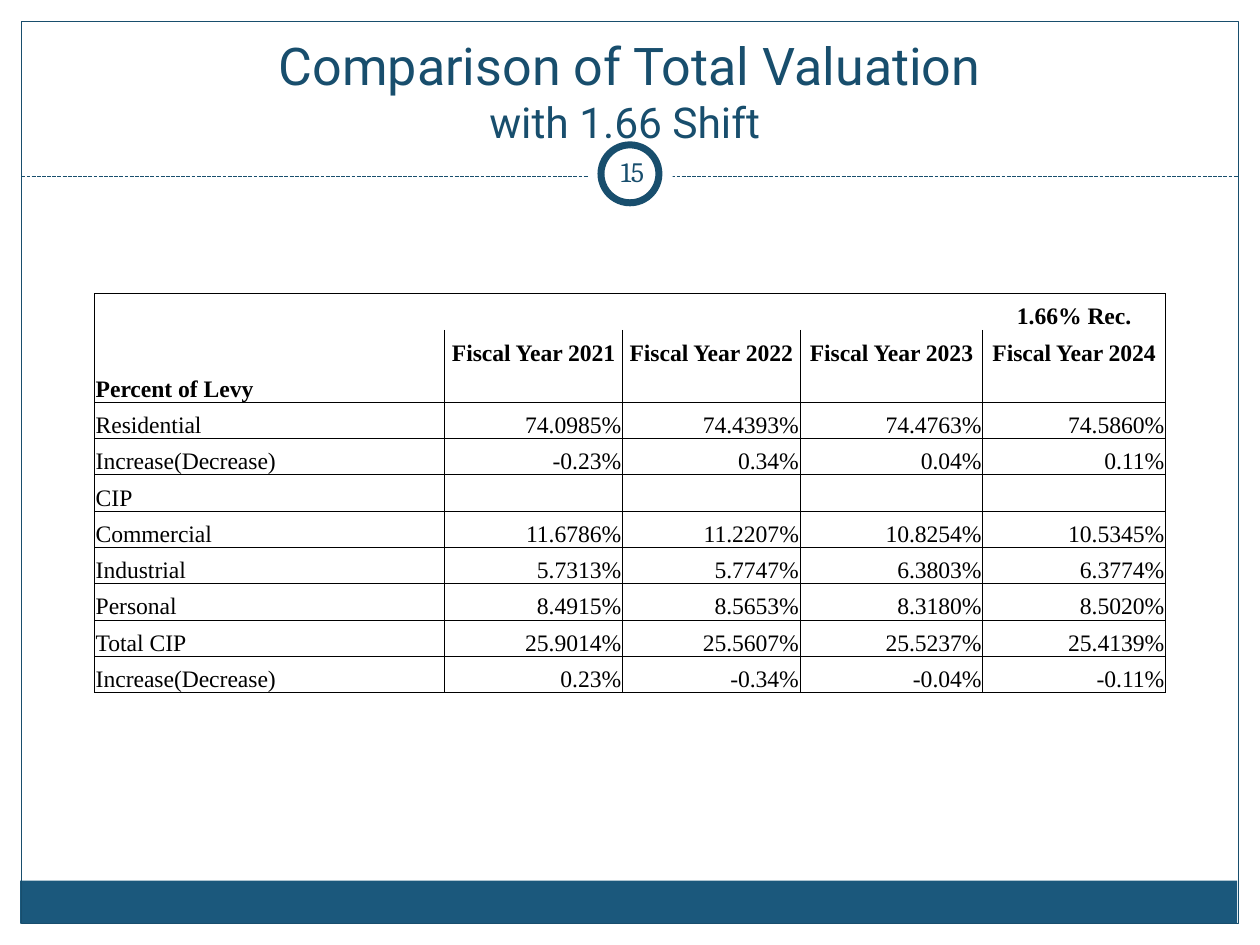
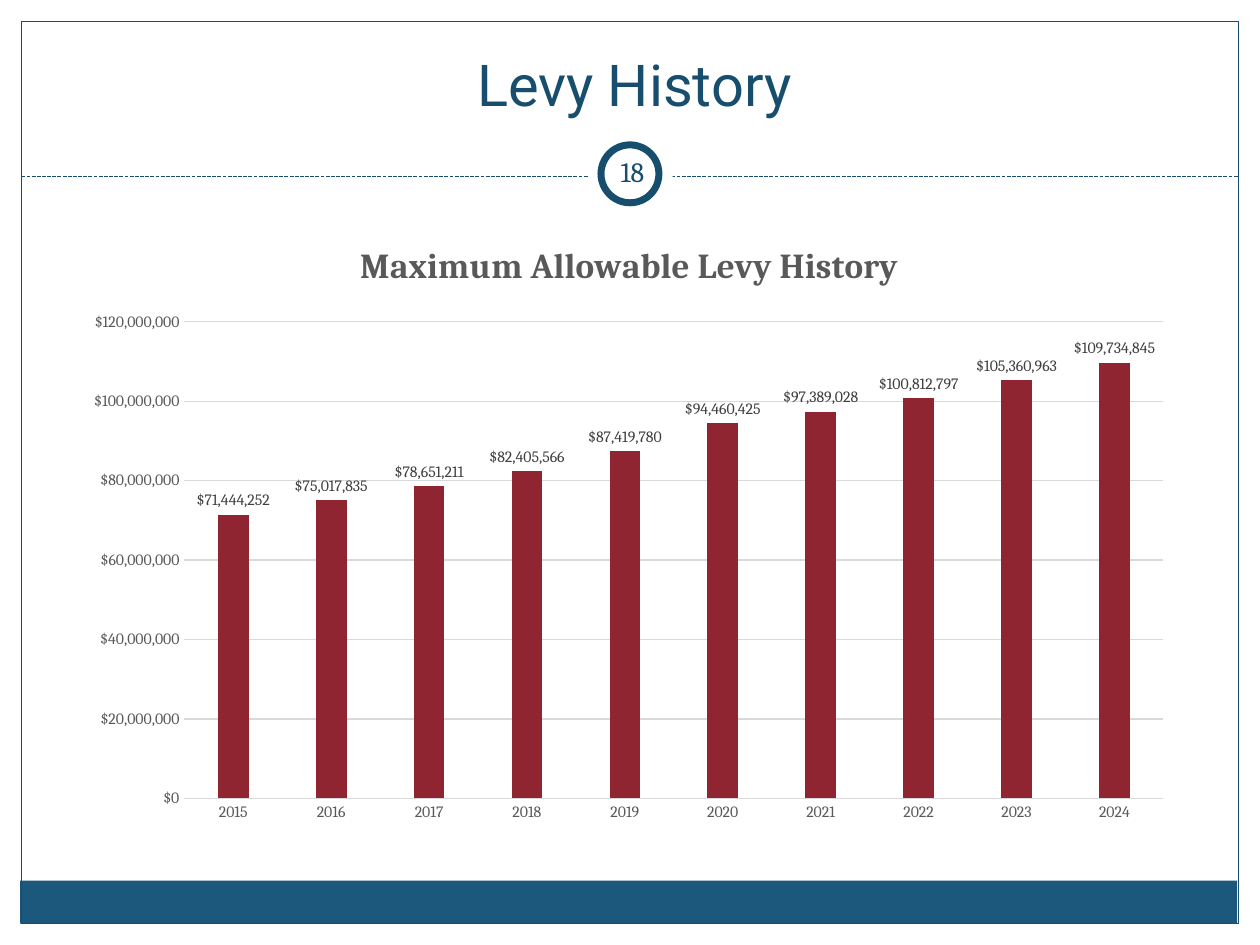
from lxml import etree
from pptx import Presentation
from pptx.chart.data import CategoryChartData
from pptx.dml.color import RGBColor
from pptx.enum.chart import XL_CHART_TYPE, XL_LABEL_POSITION, XL_TICK_MARK
from pptx.enum.dml import MSO_LINE
from pptx.enum.shapes import MSO_CONNECTOR, MSO_SHAPE
from pptx.enum.text import MSO_ANCHOR, MSO_AUTO_SIZE, PP_ALIGN
from pptx.oxml.ns import qn
from pptx.util import Pt

COLUMNS = XL_CHART_TYPE.COLUMN_CLUSTERED
OUTSIDE_END = XL_LABEL_POSITION.OUTSIDE_END
NO_TICK = XL_TICK_MARK.NONE
DASH = MSO_LINE.SQUARE_DOT
STRAIGHT = MSO_CONNECTOR.STRAIGHT
RECTANGLE, OVAL = MSO_SHAPE.RECTANGLE, MSO_SHAPE.OVAL
TOP, MIDDLE, BOTTOM = MSO_ANCHOR.TOP, MSO_ANCHOR.MIDDLE, MSO_ANCHOR.BOTTOM
FIXED_SIZE = MSO_AUTO_SIZE.NONE
LEFT, CENTER, RIGHT = PP_ALIGN.LEFT, PP_ALIGN.CENTER, PP_ALIGN.RIGHT

EMU_PER_PX = 9144
TITLE_ONLY = 5
COLORS = {
    "white": "FFFFFF",
    "navy": "184E6D",
    "band": "1B587C",
    "black": "000000",
    "bar": "8F2531",
    "axis": "595959",
    "label": "404040",
    "grid": "D9D9D9",
}
HEADING_FONT, BODY_FONT, TABLE_FONT = "Roboto", "Cambria", "Times New Roman"
DOLLARS = '"$"#,##0'
TABLE_SIZE = 13.5

LEVY_COLUMNS = [278, 141, 141, 145, 145]
LEVY_ROWS = [
    ["", "", "", "", "1.66% Rec."],
    ["", "Fiscal Year 2021", "Fiscal Year 2022", "Fiscal Year 2023", "Fiscal Year 2024"],
    ["Percent of Levy", "", "", "", ""],
    ["Residential", "74.0985%", "74.4393%", "74.4763%", "74.5860%"],
    ["Increase(Decrease)", "-0.23%", "0.34%", "0.04%", "0.11%"],
    ["CIP", "", "", "", ""],
    ["Commercial", "11.6786%", "11.2207%", "10.8254%", "10.5345%"],
    ["Industrial", "5.7313%", "5.7747%", "6.3803%", "6.3774%"],
    ["Personal", "8.4915%", "8.5653%", "8.3180%", "8.5020%"],
    ["Total CIP", "25.9014%", "25.5607%", "25.5237%", "25.4139%"],
    ["Increase(Decrease)", "0.23%", "-0.34%", "-0.04%", "-0.11%"],
]
HEADER_ROWS = 3
LEVY_BY_YEAR = {
    "2015": 71444252,
    "2016": 75017835,
    "2017": 78651211,
    "2018": 82405566,
    "2019": 87419780,
    "2020": 94460425,
    "2021": 97389028,
    "2022": 100812797,
    "2023": 105360963,
    "2024": 109734845,
}


def px(*lengths):
    return [length * EMU_PER_PX for length in lengths]


def color(name):
    return RGBColor.from_string(COLORS[name])


def levy_sides(row, column):
    if row == 0:
        return "T" + "L" * (column == 0) + "R" * (column == len(LEVY_COLUMNS) - 1)
    return {1: "LR", 2: "LRB"}.get(row, "LRTB")


class DeckBuilder:
    def __init__(self):
        self.deck = Presentation()
        self.deck.slide_width, self.deck.slide_height = px(1000, 750)
        self.page = None

    def add_page(self, number):
        self.page = self.deck.slides.add_slide(self.deck.slide_layouts[TITLE_ONLY])
        self.shape(RECTANGLE, (16, 699, 966, 34), fill="band")
        self.shape(RECTANGLE, (17, 17, 966, 716), line="navy")
        self.dashed_line(17, 140, 983, 140)
        self.shape(OVAL, (467, 105, 67, 67), fill="white")
        self.shape(OVAL, (477, 115, 46, 46), fill="white", line="navy", weight=4)
        self.page_number(number)

    def style(self, font, name, size, shade, bold=False):
        font.name, font.size, font.bold = name, Pt(size), bold
        font.color.rgb = color(shade)

    def shape(self, kind, place, fill=None, line=None, weight=0.75):
        shape = self.page.shapes.add_shape(kind, *px(*place))
        shape.shadow.inherit = False
        if fill:
            shape.fill.solid()
            shape.fill.fore_color.rgb = color(fill)
        else:
            shape.fill.background()
        if line:
            shape.line.color.rgb = color(line)
            shape.line.width = Pt(weight)
        else:
            shape.line.fill.background()

    def dashed_line(self, *ends):
        connector = self.page.shapes.add_connector(STRAIGHT, *px(*ends))
        connector.line.color.rgb = color("navy")
        connector.line.width = Pt(0.75)
        connector.line.dash_style = DASH
        etree.SubElement(connector._element.spPr, qn("a:effectLst"))

    def page_number(self, number):
        box = self.page.shapes.add_textbox(*px(477, 112, 50, 48))
        frame = box.text_frame
        frame.word_wrap = True
        frame.vertical_anchor = MIDDLE
        frame.margin_left = frame.margin_right = frame.margin_top = frame.margin_bottom = px(5)[0]
        frame.text = str(number)
        para = frame.paragraphs[0]
        para.alignment = CENTER
        self.style(para.runs[0].font, BODY_FONT, 16, "navy")

    def title(self, text, place, sizes, anchor, wrap=True):
        title = self.page.shapes.title
        title.left, title.top, title.width, title.height = px(*place)
        frame = title.text_frame
        frame.text = text
        frame.word_wrap = wrap
        frame.auto_size = FIXED_SIZE
        frame.vertical_anchor = anchor
        para = frame.paragraphs[0]
        para.alignment = CENTER
        for span, size in zip(para.runs, sizes):
            self.style(span.font, HEADING_FONT, size, "navy")
        self.page.shapes._spTree.append(title._element)

    def borders(self, cell, sides):
        properties = cell._tc.get_or_add_tcPr()
        for side in "LRTB":
            line = etree.SubElement(properties, qn(f"a:ln{side}"), w=str(int(Pt(0.5))))
            if side in sides:
                fill = etree.SubElement(line, qn("a:solidFill"))
                etree.SubElement(fill, qn("a:srgbClr"), val=COLORS["black"])
            else:
                etree.SubElement(line, qn("a:noFill"))

    def cell(self, cell, text, alignment, bold, sides):
        cell.margin_left, cell.margin_right, cell.margin_top, cell.margin_bottom = px(1, 1, 1, 0)
        cell.vertical_anchor = BOTTOM
        self.borders(cell, sides)
        cell.fill.background()
        cell.text_frame.text = text
        para = cell.text_frame.paragraphs[0]
        para.alignment = alignment
        for span in para.runs:
            self.style(span.font, TABLE_FONT, TABLE_SIZE, "black", bold)
        if not text:
            etree.SubElement(para._p, qn("a:endParaRPr"), sz=str(int(TABLE_SIZE * 100)))

    def table(self, rows, widths, place):
        table = self.page.shapes.add_table(len(rows), len(widths), *px(*place)).table
        table.first_row = table.horz_banding = False
        for column, width in zip(table.columns, px(*widths)):
            column.width = width
        for r, texts in enumerate(rows):
            header = r < HEADER_ROWS
            for c, text in enumerate(texts):
                alignment = LEFT if c == 0 else CENTER if header else RIGHT
                self.cell(table.cell(r, c), text, alignment, header, levy_sides(r, c))

    def axis(self, axis, line):
        axis.major_tick_mark = axis.minor_tick_mark = NO_TICK
        self.style(axis.tick_labels.font, BODY_FONT, 9, "axis")
        if line:
            axis.format.line.color.rgb = color(line)
            axis.format.line.width = Pt(0.75)
        else:
            axis.format.line.fill.background()

    def plot_layout(self, chart, **fractions):
        area = chart._chartSpace.chart.plotArea
        for layout in area.findall(qn("c:layout")):
            area.remove(layout)
        layout = etree.Element(qn("c:layout"))
        manual = etree.SubElement(layout, qn("c:manualLayout"))
        settings = {"layoutTarget": "inner", "xMode": "edge", "yMode": "edge", **fractions}
        for name, value in settings.items():
            etree.SubElement(manual, qn(f"c:{name}"), val=str(value))
        area.insert(0, layout)

    def column_chart(self, heading, values, place):
        data = CategoryChartData(number_format=DOLLARS)
        data.categories = list(values)
        data.add_series("Series 1", list(values.values()))
        chart = self.page.shapes.add_chart(COLUMNS, *px(*place), data).chart
        self.style(chart.font, BODY_FONT, 10, "black")
        chart.has_legend = False
        chart.has_title = True
        chart.chart_title.include_in_layout = False
        chart.chart_title.text_frame.text = heading
        span = chart.chart_title.text_frame.paragraphs[0].runs[0]
        self.style(span.font, BODY_FONT, 20, "axis", True)
        self.plot_layout(chart, x=0.1, y=0.17, w=0.88, h=0.78)

        self.axis(chart.category_axis, "grid")
        scale = chart.value_axis
        self.axis(scale, None)
        scale.minimum_scale, scale.maximum_scale, scale.major_unit = 0, 120000000, 20000000
        scale.tick_labels.number_format = DOLLARS
        scale.tick_labels.number_format_is_linked = False
        scale.major_gridlines.format.line.color.rgb = color("grid")
        scale.major_gridlines.format.line.width = Pt(0.75)

        plot = chart.plots[0]
        plot.vary_by_categories = False
        plot.gap_width, plot.overlap = 219, -27
        bars = plot.series[0].format.fill
        bars.solid()
        bars.fore_color.rgb = color("bar")
        plot.has_data_labels = True
        labels = plot.data_labels
        labels.show_value = True
        labels.position = OUTSIDE_END
        labels.number_format = DOLLARS
        labels.number_format_is_linked = False
        self.style(labels.font, BODY_FONT, 9, "label")


def main():
    builder = DeckBuilder()

    builder.add_page(15)
    builder.title("Comparison of Total Valuation\vwith 1.66 Shift ", (50, 22, 900, 100), (29.7, 24.3), BOTTOM)
    builder.table(LEVY_ROWS, LEVY_COLUMNS, (75, 233, 850, 317))

    builder.add_page(18)
    builder.title("Levy History", (367, 34, 273, 66), (33,), TOP, wrap=False)
    builder.column_chart("Maximum Allowable Levy History", LEVY_BY_YEAR, (58, 173, 883, 485))

    builder.deck.save("out.pptx")


if __name__ == "__main__":
    main()
